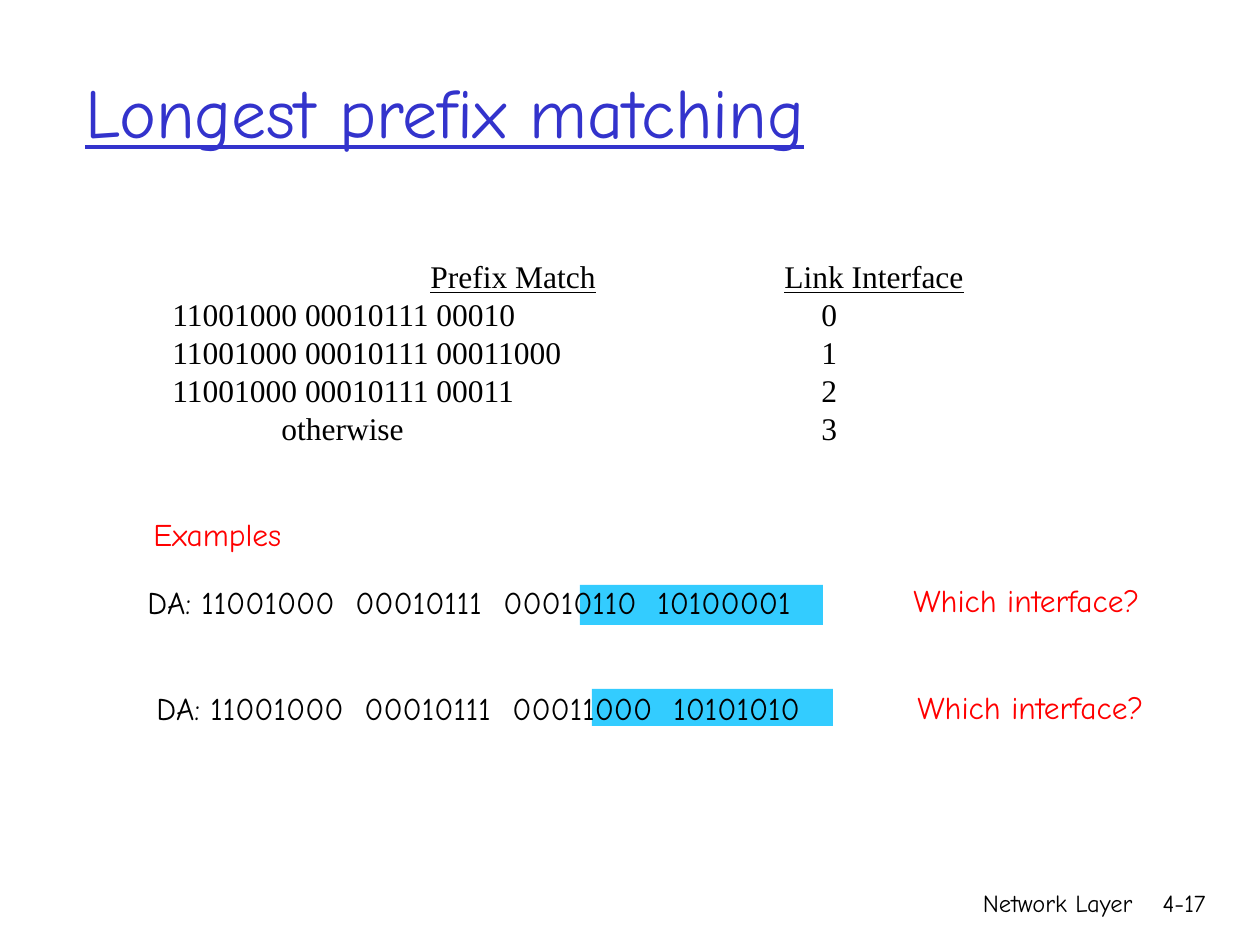
from lxml.etree import SubElement
from pptx import Presentation
from pptx.dml.color import RGBColor
from pptx.enum.shapes import MSO_SHAPE as Shape
from pptx.enum.text import MSO_ANCHOR as Anchor, PP_ALIGN as Align
from pptx.oxml.ns import qn
from pptx.util import Pt

THEME = {
    "ink": "000000", "title": "3333CC", "accent": "FF0000", "highlight": "33CCFF",
    "sans": "Comic Neue", "serif": "Times New Roman",
    "title_size": 40, "body_size": 18, "footer_size": 14,
}
EMU_PER_PX = 914400 / 126


def px(*lengths):
    return [round(length * EMU_PER_PX) for length in lengths]


def add_text(box, lines, font="sans", size="body_size", color="ink",
             align=Align.LEFT, anchor=Anchor.TOP, wrap=True, stops=(), underline=()):
    """Add lines of tab-separated cells; stops holds each line's tab stops."""
    shape = slide.shapes.add_textbox(*px(*box))
    frame = shape.text_frame
    frame.word_wrap = wrap
    frame.vertical_anchor = anchor
    for index, line in enumerate(lines):
        paragraph = frame.paragraphs[0] if index == 0 else frame.add_paragraph()
        paragraph.alignment = align
        if stops:
            tab_list = SubElement(paragraph._p.get_or_add_pPr(), qn("a:tabLst"))
            for position in px(*stops[index]):
                SubElement(tab_list, qn("a:tab"), pos=str(position), algn="l")
        for cell_index, cell in enumerate(line):
            for text in (["\t", cell] if cell_index else [cell]):
                if not text:
                    continue
                run = paragraph.add_run()
                run.text = text
                run.font.name = THEME[font]
                run.font.size = Pt(THEME[size])
                run.font.color.rgb = RGBColor.from_string(THEME[color])
                run.font.underline = index in underline and text != "\t"


presentation = Presentation()
presentation.slide_width, presentation.slide_height = px(1260, 945)
slide = presentation.slides.add_slide(presentation.slide_layouts[6])

# Destination addresses, with the bits after the matched prefix highlighted
examples = [
    ("DA: 11001000 00010111 00010110 10100001",
     (135, 577, 707, 50), (580, 585, 243, 40), (54, 208, 356, 510), (901, 575, 284, 50)),
    ("DA: 11001000 00010111 00011000 10101010",
     (144, 683, 707, 50), (592, 689, 241, 37), (54, 208, 356, 517), (905, 682, 284, 50)),
]
for address, address_box, highlight_box, stops, question_box in examples:
    highlight = slide.shapes.add_shape(Shape.RECTANGLE, *px(*highlight_box))
    highlight.shadow.inherit = False
    highlight.fill.solid()
    highlight.fill.fore_color.rgb = RGBColor.from_string(THEME["highlight"])
    highlight.line.fill.background()
    add_text(address_box, [address.split()], stops=[stops])
    add_text(question_box, [["Which interface?"]], color="accent", wrap=False)

# Footer
for box, text in [((746, 882, 399, 63), "Network Layer"), ((1125, 882, 93, 63), "4-17")]:
    add_text(box, [[text]], size="footer_size", align=Align.RIGHT)

# Title
add_text((73, 32, 1071, 157), [["Longest prefix matching"]], size="title_size",
         color="title", anchor=Anchor.MIDDLE, underline=(0,))

# Forwarding rules
prefix_stops = (79, 728)
forwarding_lines = [
    ["", "Prefix Match", "Link Interface"],
    ["", "11001000 00010111 00010", "0"],
    ["", "11001000 00010111 00011000", "1"],
    ["", "11001000 00010111 00011", "2"],
    ["", "otherwise", "3"],
]
add_text((81, 251, 901, 202), forwarding_lines, font="serif", anchor=Anchor.MIDDLE,
         stops=[(337, 691)] + [prefix_stops] * 3 + [(188, 728)], underline=(0,))
add_text((141, 509, 163, 50), [["Examples"]], color="accent", wrap=False)

presentation.save("out.pptx")
